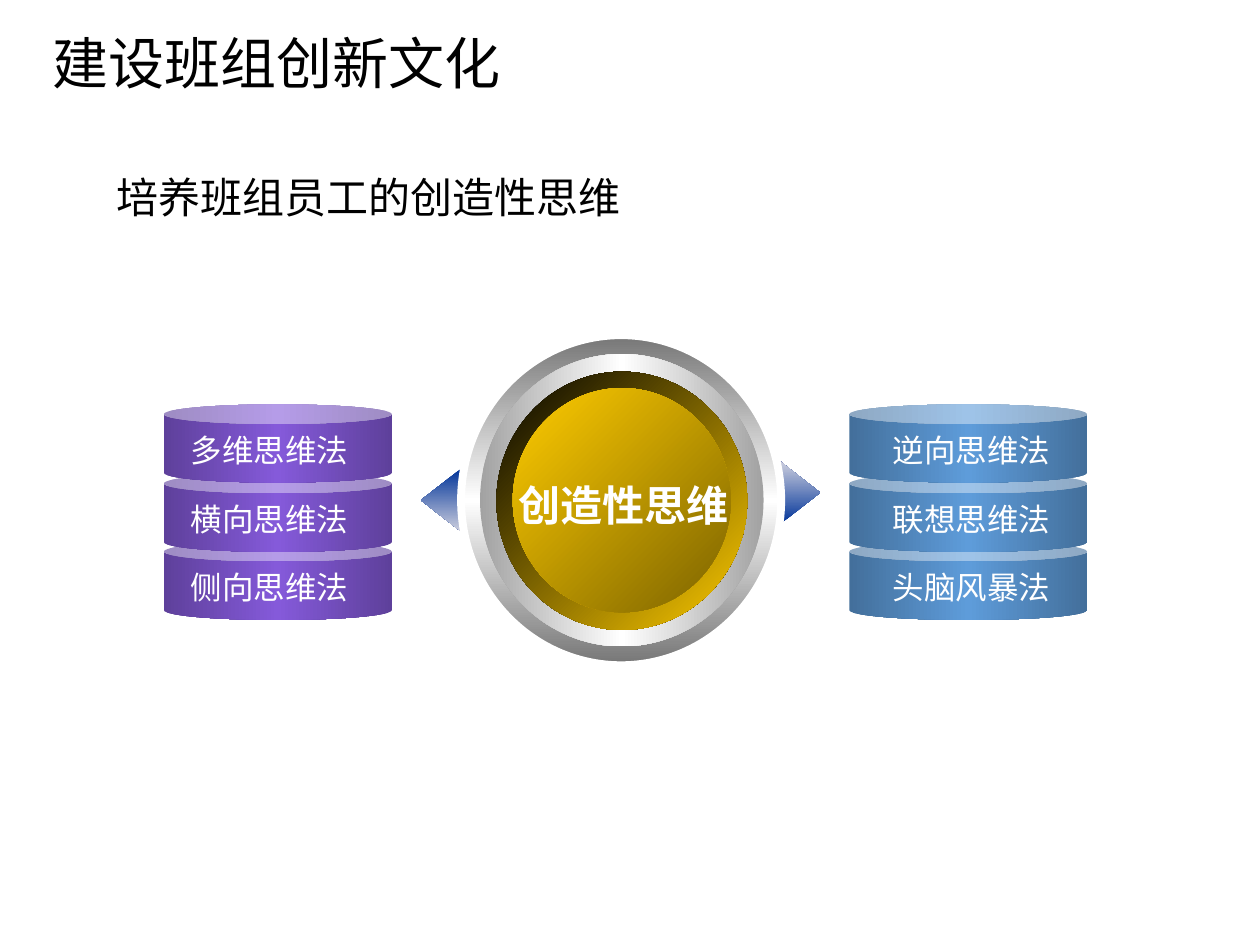
import pptx
import pptx.util
import pptx.dml.color
import pptx.enum.shapes
import pptx.enum.text
import pptx.oxml
import pptx.oxml.ns

Inches = pptx.util.Inches
Pt = pptx.util.Pt
SHAPE = pptx.enum.shapes.MSO_SHAPE
ANCHOR = pptx.enum.text.MSO_ANCHOR
ALIGN = pptx.enum.text.PP_ALIGN


def paint(code):
    return pptx.dml.color.RGBColor.from_string(code)


class Deck:
    """Holds the style and the current slide."""

    black, white = "000000", "FFFFFF"
    sans = "Arial"

    def __init__(self):
        self.file = pptx.Presentation()
        self.file.slide_width = Inches(10)
        self.file.slide_height = Inches(7.5)
        self.slide = self.file.slides.add_slide(self.file.slide_layouts[6])

    def text(self, box, words, size, font, color, bold=False, anchor=ANCHOR.TOP):
        item = self.slide.shapes.add_textbox(*map(Inches, box))
        frame = item.text_frame
        frame.text = words
        frame.word_wrap = True
        frame.vertical_anchor = anchor
        run = frame.paragraphs[0].runs[0]
        run.font.size = Pt(size)
        run.font.name = font
        run.font.bold = bold
        run.font.color.rgb = paint(color)
        props = run.font._element
        props.set("lang", "zh-CN")
        east = pptx.oxml.parse_xml(
            f'<a:ea {pptx.oxml.ns.nsdecls("a")} typeface="{font}"/>')
        props.find(pptx.oxml.ns.qn("a:latin")).addnext(east)
        return frame

    def label(self, box, words, size, bold=False):
        frame = self.text(box, words, size, self.sans, self.white, bold)
        frame.word_wrap = False
        frame.auto_size = pptx.enum.text.MSO_AUTO_SIZE.SHAPE_TO_FIT_TEXT
        frame.paragraphs[0].alignment = ALIGN.CENTER

    def shape(self, kind, box, stops, angle=0):
        """Add a shape; stops are (percent, colour, change, amount)."""
        item = self.slide.shapes.add_shape(kind, *map(Inches, box))
        item.shadow.inherit = False
        item.line.fill.background()
        marks = ""
        for place, color, *change in stops:
            tone = f'<a:{change[0]} val="{change[1] * 1000}"/>' if change else ""
            marks += (f'<a:gs pos="{place * 1000}"><a:srgbClr val="{color}">'
                      f'{tone}</a:srgbClr></a:gs>')
        grad = pptx.oxml.parse_xml(
            f'<a:gradFill {pptx.oxml.ns.nsdecls("a")} rotWithShape="1">'
            f'<a:gsLst>{marks}</a:gsLst>'
            f'<a:lin ang="{angle * 60000}" scaled="0"/></a:gradFill>')
        outline = item._element.spPr.find(pptx.oxml.ns.qn("a:prstGeom"))
        outline.addnext(grad)
        return item

    def arrow(self, left, top, turn):
        stops = [(0, "003399"), (100, "003399", "tint", 39)]
        item = self.shape(SHAPE.UP_ARROW, (left, top, 0.5, 0.32), stops)
        item.adjustments[0] = 0.52
        item.adjustments[1] = 1
        item.rotation = turn
        item._element.spPr.xfrm.set("flipH", "1")

    def stack(self, left, width, color, text_left, names):
        edge = (color, "shade", 46)
        stops = [(0, *edge), (50, color), (100, *edge)]
        tops = (3.21, 3.76, 4.3)
        for top in reversed(tops):
            self.shape(SHAPE.CAN, (left, top, width, 0.62), stops)
        for top, name in zip(tops, names):
            self.label((text_left, top + 0.16, 1.46, 0.4), name, 18)


def main():
    deck = Deck()
    title = deck.text((0, 0, 10, 0.98), "建设班组创新文化", 32,
                      "Noto Sans CJK SC", deck.black, anchor=ANCHOR.MIDDLE)
    props = title.paragraphs[0]._p.get_or_add_pPr()
    props.set("indent", str(Inches(0.32)))
    deck.text((0.83, 1.31, 8.98, 0.47), "培养班组员工的创造性思维", 24,
              "Calibri", deck.black)

    deck.arrow(3.25, 3.81, 270)
    deck.arrow(6.1, 3.75, 90)

    rim = deck.shape(SHAPE.OVAL, (3.66, 2.66, 2.54, 2.62),
                     [(0, "767676"), (50, "FFFFFF"), (100, "767676")], 90)
    rim.line.color.rgb = paint(deck.white)
    rim.line.width = Pt(4.5)
    deck.shape(SHAPE.OVAL, (3.81, 2.81, 2.25, 2.32),
               [(0, "A2A2A2"), (50, "FFFFFF"), (100, "A2A2A2")])
    deck.shape(SHAPE.OVAL, (3.94, 2.95, 1.99, 2.05),
               [(0, "000000"), (100, "FFCC00")], 45)
    deck.shape(SHAPE.OVAL, (4.07, 3.08, 1.73, 1.78),
               [(0, "FFCC00"), (100, "7C6300")], 45)
    deck.label((4, 3.76, 1.89, 0.5), "创造性思维", 24, bold=True)

    deck.stack(1.3, 1.81, "855ADA", 1.41,
               ("多维思维法", "横向思维法", "侧向思维法"))
    deck.stack(6.74, 1.89, "5E9CDA", 6.98,
               ("逆向思维法", "联想思维法", "头脑风暴法"))
    deck.file.save("out.pptx")


if __name__ == "__main__":
    main()
